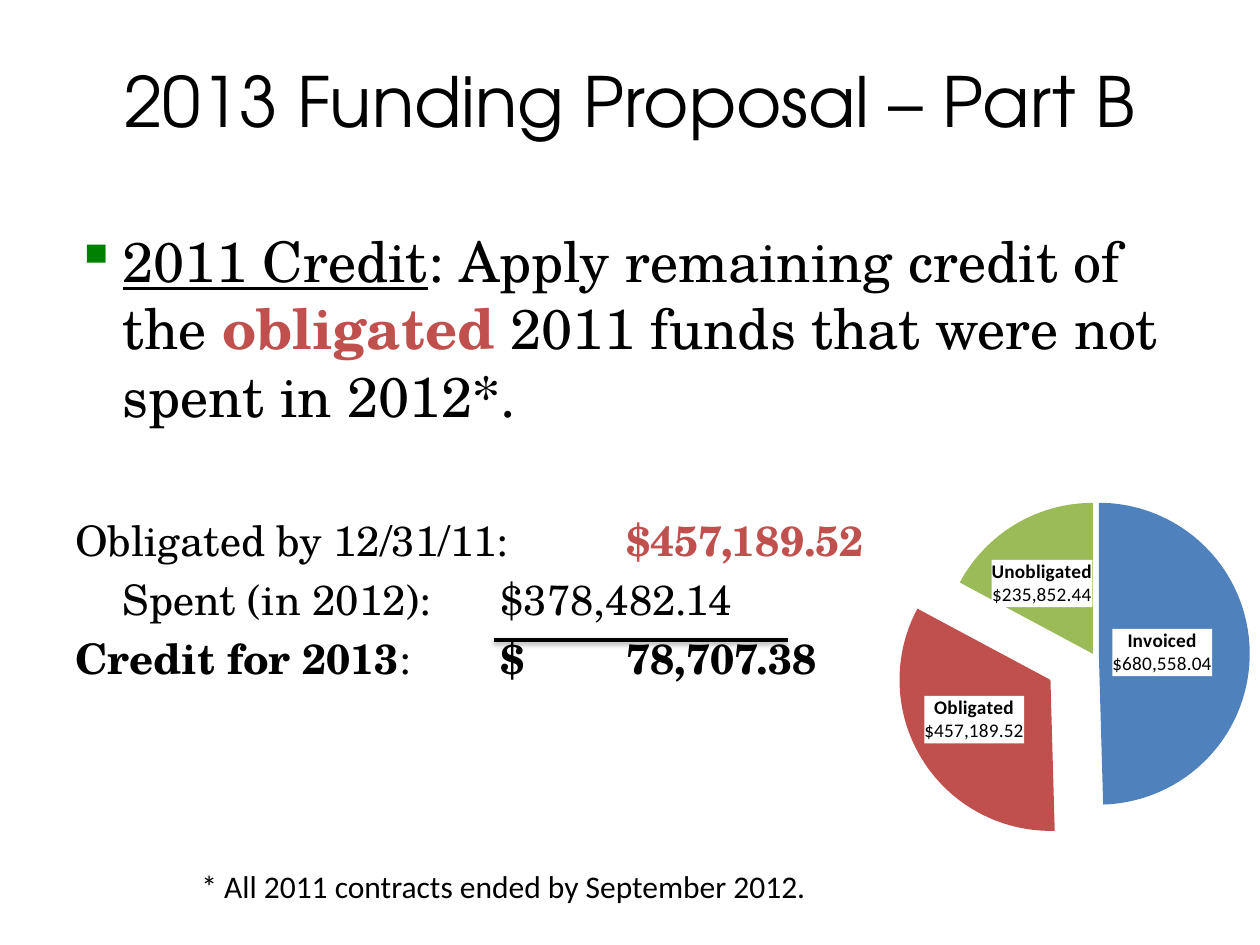
import pptx
import pptx.chart.data
import pptx.dml.color
import pptx.enum.chart
import pptx.enum.shapes
import pptx.enum.text
import pptx.oxml
import pptx.oxml.ns
import pptx.util

Pt = pptx.util.Pt
qn = pptx.oxml.ns.qn
CENTER = pptx.enum.text.PP_ALIGN.CENTER
BLACK = pptx.dml.color.RGBColor(0, 0, 0)
BLUE = pptx.dml.color.RGBColor(0x4F, 0x81, 0xBD)
RED = pptx.dml.color.RGBColor(0xC0, 0x50, 0x4D)
LIME = pptx.dml.color.RGBColor(0x9B, 0xBB, 0x59)
GREEN = pptx.dml.color.RGBColor(0, 0x80, 0)
HEADING, BODY, PLAIN = "TeX Gyre Adventor", "TeX Gyre Schola", "Calibri"
INDENT, TAB = 27, 72


def xml(text):
    ns = pptx.oxml.ns.nsdecls("a", "c")
    tag, rest = text[1:].split(">", 1)
    slash = "/" if tag.endswith("/") else ""
    return pptx.oxml.parse_xml(f"<{tag.rstrip('/')} {ns}{slash}>{rest}")


class Deck:
    def __init__(self, slide):
        self.s = slide

    def box(self, x, y, w, h, anchor=pptx.enum.text.MSO_ANCHOR.TOP):
        tf = self.s.shapes.add_textbox(Pt(x), Pt(y), Pt(w), Pt(h)).text_frame
        tf.word_wrap = True
        tf.vertical_anchor = anchor
        return tf

    def para(self, tf, runs, font, size, before=0, bullet=None, tabs=(),
             hanging=False, align=pptx.enum.text.PP_ALIGN.LEFT):
        p = tf.paragraphs[0]
        if p.runs:
            p = tf.add_paragraph()
        p.alignment = align
        if before:
            p.space_before = Pt(before)
        pPr = p._p.get_or_add_pPr()
        if hanging:
            pPr.set("marL", str(Pt(INDENT)))
            pPr.set("indent", str(-Pt(INDENT)))
            pPr.set("defTabSz", str(Pt(TAB)))
        if bullet:
            pPr.append(xml(f'<a:buClr><a:srgbClr val="{GREEN}"/></a:buClr>'))
            pPr.append(xml('<a:buFont typeface="OpenSymbol"/>'))
            pPr.append(xml(f'<a:buChar char="{bullet}"/>'))
        else:
            pPr.append(xml("<a:buNone/>"))
        if tabs:
            stops = "".join(f'<a:tab pos="{Pt(t)}" algn="l"/>' for t in tabs)
            pPr.append(xml(f"<a:tabLst>{stops}</a:tabLst>"))
        for text, style in runs:
            r = p.add_run()
            r.text = text
            r.font.name, r.font.size = font, Pt(size)
            r.font.bold = "b" in style
            r.font.underline = "u" in style
            r.font.color.rgb = RED if "r" in style else BLACK

    def rule(self, x1, x2, y):
        sp = self.s.shapes.add_connector(
            pptx.enum.shapes.MSO_CONNECTOR.STRAIGHT, Pt(x1), Pt(y), Pt(x2), Pt(y))
        sp.line.color.rgb = BLACK
        sp.line.width = Pt(2)
        sp._element.spPr.append(xml(
            f'<a:effectLst><a:outerShdw blurRad="{Pt(3.1)}" dist="{Pt(1.6)}" '
            'dir="5400000" rotWithShape="0"><a:srgbClr val="000000">'
            '<a:alpha val="38000"/></a:srgbClr></a:outerShdw></a:effectLst>'))

    def pie(self, x, y, w, h, plot, explosion, slices):
        data = pptx.chart.data.CategoryChartData(number_format='"$"#,##0.00')
        data.categories = [name for name, *_ in slices]
        data.add_series("Series 1", [round(value) for _, value, *_ in slices])
        chart = self.s.shapes.add_chart(
            pptx.enum.chart.XL_CHART_TYPE.PIE, Pt(x), Pt(y), Pt(w), Pt(h), data).chart
        chart.has_legend = chart.has_title = False
        chart.font.name, chart.font.size = PLAIN, Pt(18)
        chart.font.color.rgb = BLACK
        chart.plots[0].vary_by_categories = True
        self.place_plot(chart, plot)
        series = chart.plots[0].series[0]
        series.data_labels.show_value = True
        series.data_labels.show_category_name = True
        series.data_labels.font.size = Pt(11)
        for i, item in enumerate(slices):
            self.slice(series, i, *item)
        series._element.find(qn("c:dPt")).addprevious(
            xml(f'<c:explosion val="{explosion}"/>'))

    def place_plot(self, chart, plot):
        area = chart._chartSpace.find(".//" + qn("c:plotArea"))
        for old in area.findall(qn("c:layout")):
            area.remove(old)
        parts = "".join(f'<c:{k} val="{v}"/>' for k, v in zip("xywh", plot))
        area.insert(0, xml(
            '<c:layout><c:manualLayout><c:layoutTarget val="inner"/>'
            f'<c:xMode val="edge"/><c:yMode val="edge"/>{parts}'
            '</c:manualLayout></c:layout>'))

    def slice(self, series, i, name, value, color, offset, shift):
        point = series.points[i]
        point.format.fill.solid()
        point.format.fill.fore_color.rgb = color
        spPr = series._element.findall(qn("c:dPt"))[i].find(qn("c:spPr"))
        spPr.addprevious(xml(f'<c:explosion val="{offset}"/>'))
        tf = point.data_label.text_frame
        for text, style in ((name, "b"), (f"${value:,.2f}", "")):
            self.para(tf, [(text, style)], PLAIN, 11, align=CENTER)
        point.data_label.position = pptx.enum.chart.XL_LABEL_POSITION.CENTER
        label = series._element.findall(".//" + qn("c:dLbl"))[i]
        for old in label.findall(qn("c:spPr")):
            label.remove(old)
        tx = label.find(qn("c:tx"))
        tx.addprevious(xml(
            f'<c:layout><c:manualLayout><c:x val="{shift[0]}"/>'
            f'<c:y val="{shift[1]}"/></c:manualLayout></c:layout>'))
        tx.addnext(xml(
            '<c:spPr><a:solidFill><a:srgbClr val="FFFFFF"/></a:solidFill></c:spPr>'))
        label.find(qn("c:showCatName")).set("val", "1")


def main():
    prs = pptx.Presentation()
    prs.slide_width, prs.slide_height = Pt(720), Pt(540)
    for level in prs.element.iter(qn("a:lvl1pPr")):
        level.set("defTabSz", str(Pt(TAB)))
    deck = Deck(prs.slides.add_slide(prs.slide_layouts[6]))

    title = deck.box(36, 12.24, 648, 90, pptx.enum.text.MSO_ANCHOR.MIDDLE)
    deck.para(title, [("2013 Funding Proposal – Part B", "")], HEADING, 39.6,
              align=CENTER)

    body = deck.box(36, 126, 648, 356.4)
    deck.para(body, [("2011 Credit", "u"),
                     (": Apply remaining credit of the ", ""),
                     ("obligated", "br"),
                     (" 2011 funds that were not spent in 2012*.", "")],
              BODY, 32, bullet="▪", hanging=True)
    sums = [
        ([("Obligated by 12/31/11:\t", ""), ("$457,189.52", "br")], 49.5, [252.72]),
        ([("\tSpent (in 2012):\t$378,482.14", "")], 4.8, [252.72]),
        ([("Credit for 2013", "b"), (":\t", ""), ("$\t78,707.38", "b")], 4.8,
         [252.72, 278.64]),
    ]
    for runs, before, tabs in sums:
        deck.para(body, runs, BODY, 24, before=before, tabs=tabs, hanging=True)

    deck.pie(468, 192.24, 347.76, 318.24, (0.14, 0.23, 0.62, 0.68), 25,
             [("Invoiced", 680558.04, BLUE, 4, (-0.02, 0)),
              ("Obligated", 457189.52, RED, 33, (-0.02, 0)),
              ("Unobligated", 235852.44, LIME, 0, (-0.02, -0.01))])

    note = deck.box(108, 491.76, 545.76, 28.8)
    deck.para(note, [("* All 2011 contracts ended by September 2012.", "")], PLAIN, 18)
    deck.rule(282.24, 450, 365.76)
    prs.save("out.pptx")


if __name__ == "__main__":
    main()
